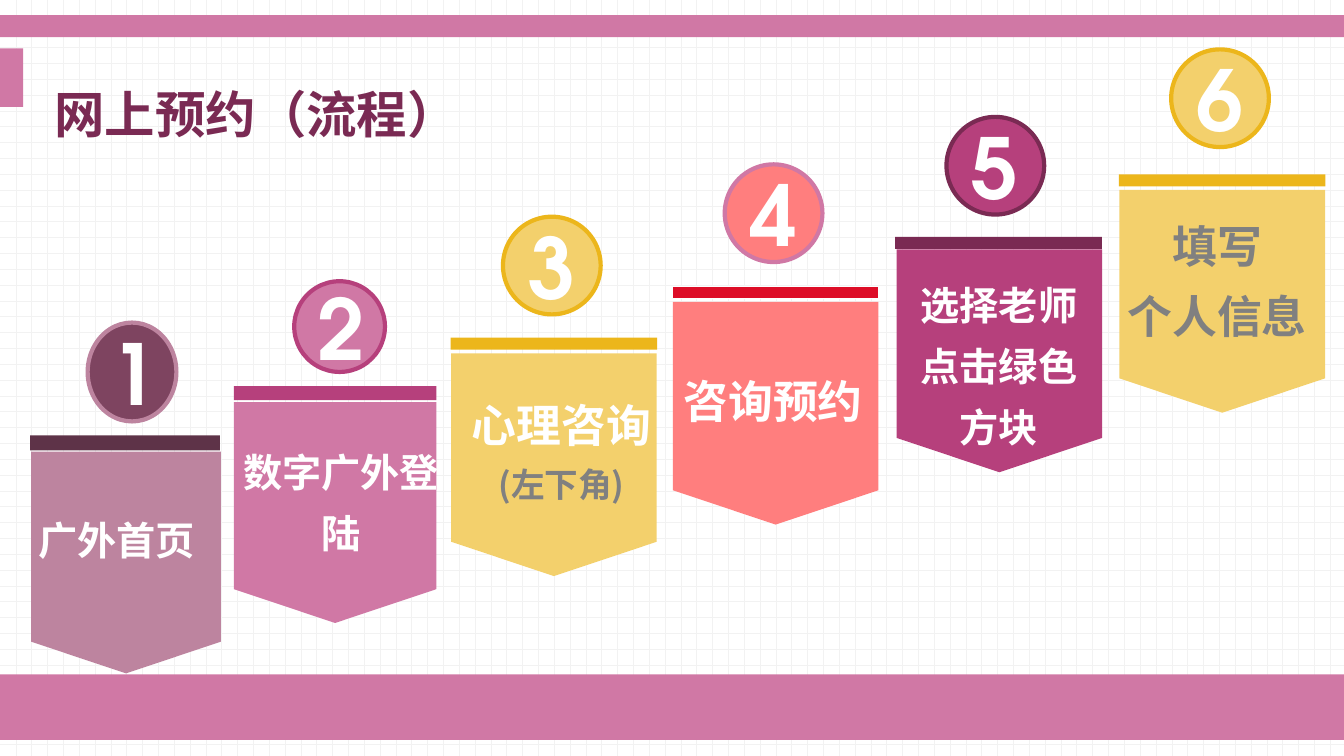
from lxml import etree
from pptx import Presentation
from pptx.dml.color import RGBColor
from pptx.enum import dml, shapes, text
from pptx.oxml import ns
from pptx.util import Pt

CJK_FONT = "Noto Sans CJK SC"
DIGIT_FONT = "TeX Gyre Adventor"

WHITE = RGBColor(0xFF, 0xFF, 0xFF)
GRID = RGBColor(0xF2, 0xF2, 0xF2)
GRAY = RGBColor(0x80, 0x80, 0x80)
PINK = RGBColor(0xD0, 0x78, 0xA5)
MAUVE = RGBColor(0xBD, 0x84, 0x9F)
PLUM = RGBColor(0x7E, 0x44, 0x60)
DARK_PLUM = RGBColor(0x5E, 0x33, 0x48)
MAGENTA = RGBColor(0xB6, 0x40, 0x7C)
WINE = RGBColor(0x7A, 0x2A, 0x53)
SAND = RGBColor(0xF3, 0xD0, 0x6C)
GOLD = RGBColor(0xEC, 0xB6, 0x1B)
CORAL = RGBColor(0xFF, 0x7E, 0x7E)
RED = RGBColor(0xDD, 0x0D, 0x27)

# Boxes are (left, top, width, height) in points.
# A label is a list of paragraphs, each a list of (words, size, colour) runs.
STEPS = [
    dict(cap=(21.6, 311, 135.4, 10.8), cap_color=DARK_PLUM,
         banner=(22.3, 322.6, 135.4, 158.4), banner_color=MAUVE,
         circle=(62.6, 230.4, 63.4, 70.6), circle_color=PLUM, ring=MAUVE,
         box=(20.2, 355, 126.7, 51.1), label=[[("广外首页", 28, WHITE)]],
         wrap=False, align=text.PP_ALIGN.LEFT),
    dict(cap=(167, 275.8, 144.7, 10.1), cap_color=MAGENTA,
         banner=(167, 287.3, 144.7, 157.7), banner_color=PINK,
         circle=(210.2, 200.9, 64.8, 64.8), circle_color=PINK, ring=MAGENTA,
         box=(166.3, 306.7, 154.8, 139.7),
         label=[[("数字广外登陆", 28, WHITE)]]),
    dict(cap=(321.8, 241.2, 147.6, 8.6), cap_color=GOLD,
         banner=(322.2, 252.4, 146.9, 159.1), banner_color=SAND,
         circle=(359.3, 154.8, 69.8, 69.8), circle_color=SAND, ring=GOLD,
         box=(327.6, 269.3, 146.9, 95),
         label=[[("心理咨询", 32, WHITE), ("(左下角)", 24, GRAY)]]),
    dict(cap=(480.2, 204.5, 147.6, 8.6), cap_color=RED, cap_line=WHITE,
         banner=(480.6, 215.6, 146.9, 159.1), banner_color=CORAL,
         circle=(517.7, 117.4, 69.8, 69.8), circle_color=CORAL, ring=PINK,
         box=(470.9, 252, 162.7, 57.6), label=[[("咨询预约", 32, WHITE)]]),
    dict(cap=(639.4, 169.2, 147.6, 8.6), cap_color=WINE,
         banner=(640.4, 178.2, 146.9, 159.1), banner_color=MAGENTA,
         circle=(676.1, 83.5, 69.8, 69.8), circle_color=MAGENTA, ring=WINE,
         box=(640.1, 187.2, 146.9, 139.7),
         label=[[("选择老师", 28, WHITE)], [("点击绿色方块", 28, WHITE)]]),
    dict(cap=(799.2, 124.6, 147.6, 8.6), cap_color=GOLD,
         banner=(799.6, 135.7, 146.9, 159.1), banner_color=SAND,
         circle=(836.6, 35.3, 69.8, 69.8), circle_color=SAND, ring=GOLD,
         box=(787, 141.1, 164.9, 108),
         label=[[("填写", 32, GRAY)], [("个人信息", 32, GRAY)]]),
]


def set_all(target, values):
    for name, value in values.items():
        setattr(target, name, value)


def add_run(paragraph, words, size, color, font_name=CJK_FONT):
    run = paragraph.add_run()
    run.text = words
    set_all(run.font, dict(size=Pt(size), bold=True, name=font_name))
    run.font.color.rgb = color
    east_asian = etree.SubElement(run.font._element, ns.qn("a:ea"))
    east_asian.set("typeface", font_name)


def add_block(slide, kind, box, color, line=None, line_width=1):
    shape = slide.shapes.add_shape(kind, *map(Pt, box))
    shape.shadow.inherit = False
    shape.fill.solid()
    shape.fill.fore_color.rgb = color
    if line is None:
        shape.line.fill.background()
    else:
        shape.line.color.rgb = line
        shape.line.width = Pt(line_width)
    return shape


def add_banner(slide, box, color):
    """Add a pentagon turned to point down, filling the given upright box."""
    left, top, width, height = box
    shift = (height - width) / 2
    turned = (left - shift, top + shift, height, width)
    banner = add_block(slide, shapes.MSO_SHAPE.PENTAGON, turned, color)
    banner.rotation = 90
    banner.adjustments[0] = 0.167


def add_label(slide, box, label, wrap=True, align=text.PP_ALIGN.CENTER):
    frame = slide.shapes.add_textbox(*map(Pt, box)).text_frame
    set_all(frame, dict(word_wrap=wrap,
                        auto_size=text.MSO_AUTO_SIZE.SHAPE_TO_FIT_TEXT))
    for index, runs in enumerate(label):
        paragraph = frame.add_paragraph() if index else frame.paragraphs[0]
        set_all(paragraph, dict(alignment=align, line_spacing=1.3))
        for run in runs:
            add_run(paragraph, *run)


def add_number(slide, number, box, color, ring):
    circle = add_block(slide, shapes.MSO_SHAPE.OVAL, box, color, ring, 3)
    circle.text_frame.vertical_anchor = text.MSO_ANCHOR.MIDDLE
    paragraph = circle.text_frame.paragraphs[0]
    paragraph.alignment = text.PP_ALIGN.CENTER
    add_run(paragraph, str(number), 60, WHITE, DIGIT_FONT)


def add_step(slide, number, step):
    add_block(slide, shapes.MSO_SHAPE.RECTANGLE, step["cap"],
              step["cap_color"], step.get("cap_line"))
    add_banner(slide, step["banner"], step["banner_color"])
    add_label(slide, step["box"], step["label"], step.get("wrap", True),
              step.get("align", text.PP_ALIGN.CENTER))
    add_number(slide, number, step["circle"], step["circle_color"],
               step["ring"])


def set_title(slide, words):
    title = slide.shapes.title
    set_all(title, dict(left=Pt(31.7), top=Pt(62.6),
                        width=Pt(479.5), height=Pt(41.8)))
    set_all(title.text_frame, dict(word_wrap=True,
                                   auto_size=text.MSO_AUTO_SIZE.NONE,
                                   vertical_anchor=text.MSO_ANCHOR.MIDDLE))
    paragraph = title.text_frame.paragraphs[0]
    set_all(paragraph, dict(alignment=text.PP_ALIGN.LEFT, line_spacing=0.9))
    add_run(paragraph, words, 36, WINE)


def set_background(slide):
    fill = slide.background.fill
    fill.patterned()
    fill.pattern = dml.MSO_PATTERN.DOTTED_GRID
    fill.fore_color.rgb = GRID
    fill.back_color.rgb = WHITE


def main():
    presentation = Presentation()
    set_all(presentation, dict(slide_width=Pt(960), slide_height=Pt(540)))
    slide = presentation.slides.add_slide(presentation.slide_layouts[5])
    set_background(slide)

    # Bottom band, top band and side tab
    for box in [(0, 481.7, 960, 46.8), (0, 10.8, 960, 15.8),
                (0, 34.6, 16.6, 41.8)]:
        add_block(slide, shapes.MSO_SHAPE.RECTANGLE, box, PINK)

    # Heading and the six rising steps
    set_title(slide, "网上预约（流程）")
    for number, step in enumerate(STEPS, start=1):
        add_step(slide, number, step)

    presentation.save("out.pptx")


if __name__ == "__main__":
    main()
